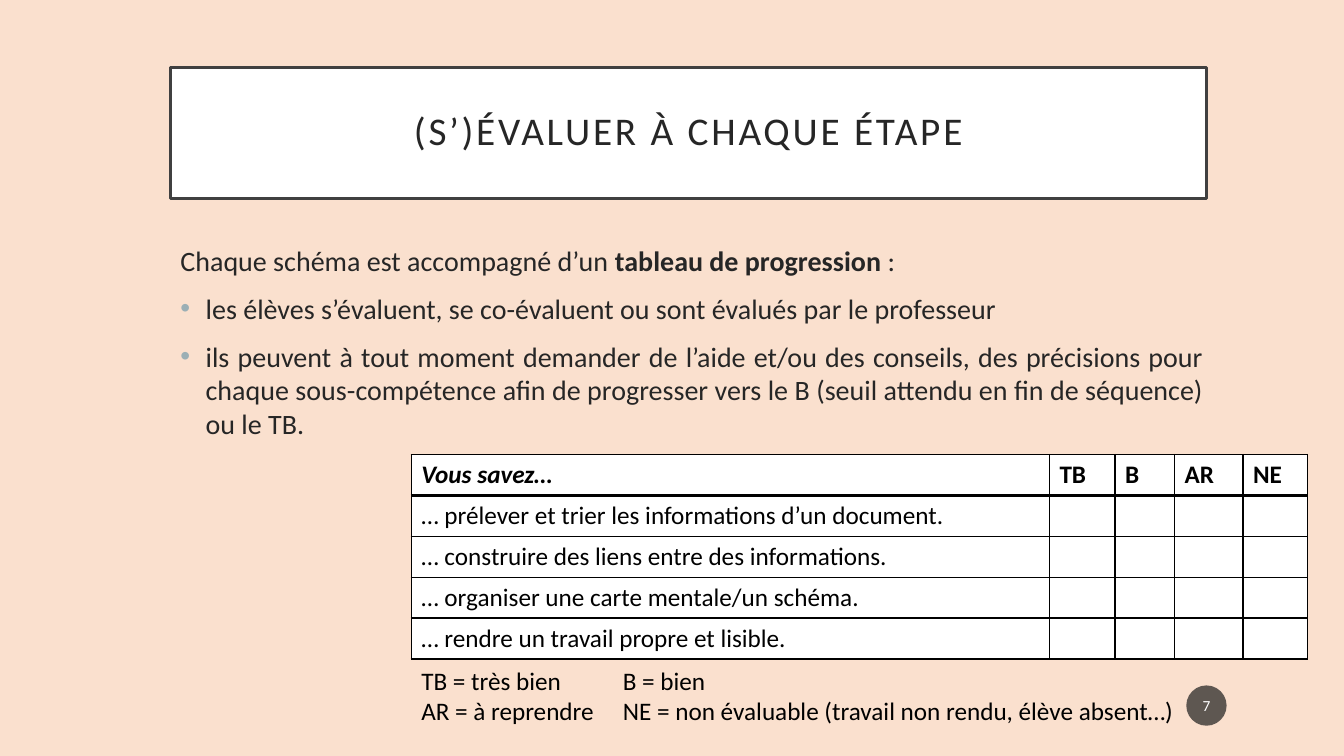
from dataclasses import dataclass

from lxml import etree
from pptx import Presentation
from pptx.dml.color import RGBColor
from pptx.enum.shapes import MSO_SHAPE
from pptx.enum.text import MSO_ANCHOR, MSO_AUTO_SIZE, PP_ALIGN
from pptx.oxml.ns import qn
from pptx.util import Pt

OVAL = MSO_SHAPE.OVAL
TOP, MIDDLE = MSO_ANCHOR.TOP, MSO_ANCHOR.MIDDLE
LEFT, CENTER, JUSTIFY = PP_ALIGN.LEFT, PP_ALIGN.CENTER, PP_ALIGN.JUSTIFY
NO_RESIZE = MSO_AUTO_SIZE.NONE

TITLE = "(S’)ÉVALUER À CHAQUE ÉTAPE"
INTRODUCTION = [("Chaque schéma est accompagné d’un ", False), ("tableau de progression", True), (" : ", False)]
BULLETS = [
    "les élèves s’évaluent, se co-évaluent ou sont évalués par le professeur",
    "ils peuvent à tout moment demander de l’aide et/ou des conseils, des précisions pour "
    "chaque sous-compétence afin de progresser vers le B (seuil attendu en fin de séquence) ou le TB.",
]
HEADERS = ["Vous savez…", "TB", "B", "AR", "NE"]
SKILLS = [
    "… prélever et trier les informations d’un document.",
    "… construire des liens entre des informations.",
    "… organiser une carte mentale/un schéma.",
    "… rendre un travail propre et lisible.",
]
LEGEND = [
    "TB = très bien\tB = bien",
    "AR = à reprendre\tNE = non évaluable (travail non rendu, élève absent…)",
]
PAGE_NUMBER = "7"


@dataclass(frozen=True)
class Theme:
    font: str = "Calibri"
    background: str = "FAE0CE"
    white: str = "FFFFFF"
    black: str = "000000"
    text: str = "262626"
    frame: str = "404040"
    bullet: str = "9BAFB5"
    badge: str = "1D1D1D"
    title_size: float = 28
    body_size: float = 20
    table_size: float = 18
    number_size: float = 11


THEME = Theme()
SLIDE_SIZE = (960, 540)
TITLE_BOX = (121.7, 48.2, 740.2, 93.6)
BODY_BOX = (121.7, 170.6, 745.2, 254.2)
BADGE_BOX = (847.4, 489.6, 28.8, 28.8)
TABLE_LEFT, TABLE_TOP = 293.8, 324.7
COLUMN_WIDTHS = [455.8, 46.8, 42.5, 49, 46]
ROW_HEIGHT = 29.2
LEGEND_BOX = (TABLE_LEFT, 471.6, 568.1, 51.1)
LEGEND_TAB = 144
INDENT = 18


def apply(target, values):
    for name, value in values.items():
        setattr(target, name, value)


def points(values):
    return [Pt(value) for value in values]


def place(shape, box):
    apply(shape, dict(zip(("left", "top", "width", "height"), points(box))))


def add_element(parent, tag, **attributes):
    return etree.SubElement(parent, qn(tag), {name: str(value) for name, value in attributes.items()})


def set_frame(frame, anchor=TOP, side=7.2, edge=3.6):
    apply(frame, {
        "word_wrap": True, "auto_size": NO_RESIZE, "vertical_anchor": anchor,
        "margin_left": Pt(side), "margin_right": Pt(side),
        "margin_top": Pt(edge), "margin_bottom": Pt(edge),
    })


def add_run(paragraph, text, size, color, bold=False, italic=False):
    run = paragraph.add_run()
    run.text = text
    apply(run.font, {"name": THEME.font, "size": Pt(size), "bold": bold, "italic": italic})
    run.font.color.rgb = RGBColor.from_string(color)
    return run


def format_paragraph(paragraph, alignment, before=0, spacing=1.0):
    apply(paragraph, {"alignment": alignment, "space_before": Pt(before),
                      "space_after": Pt(0), "line_spacing": spacing})


def paragraph_at(frame, index):
    return frame.paragraphs[0] if index == 0 else frame.add_paragraph()


def fill_solid(target, color):
    target.fill.solid()
    target.fill.fore_color.rgb = RGBColor.from_string(color)


def set_bullet(paragraph, bulleted):
    properties = paragraph._p.get_or_add_pPr()
    properties.set("marL", str(Pt(INDENT if bulleted else 0)))
    properties.set("indent", str(Pt(-INDENT if bulleted else 0)))
    if bulleted:
        add_element(add_element(properties, "a:buClr"), "a:srgbClr", val=THEME.bullet)
        add_element(properties, "a:buFont", typeface="Arial")
        add_element(properties, "a:buChar", char="•")
    else:
        add_element(properties, "a:buNone")


def set_borders(cell, bottom_width):
    properties = cell._tc.get_or_add_tcPr()
    for side, width in (("L", 1), ("R", 1), ("T", 1), ("B", bottom_width)):
        line = add_element(properties, f"a:ln{side}", w=Pt(width))
        add_element(add_element(line, "a:solidFill"), "a:srgbClr", val=THEME.black)


def build_title(slide):
    title = slide.shapes.title
    place(title, TITLE_BOX)
    fill_solid(title, THEME.white)
    title.line.color.rgb = RGBColor.from_string(THEME.frame)
    title.line.width = Pt(2.5)
    set_frame(title.text_frame, MIDDLE, 14.4, 14.4)
    paragraph = title.text_frame.paragraphs[0]
    format_paragraph(paragraph, CENTER, spacing=0.9)
    run = add_run(paragraph, TITLE, THEME.title_size, THEME.text)
    run.font._element.set("spc", "200")


def build_body(slide):
    body = slide.placeholders[1]
    place(body, BODY_BOX)
    set_frame(body.text_frame)
    for index, parts in enumerate([INTRODUCTION] + [[(text, False)] for text in BULLETS]):
        paragraph = paragraph_at(body.text_frame, index)
        format_paragraph(paragraph, JUSTIFY, before=10)
        set_bullet(paragraph, index > 0)
        for text, bold in parts:
            add_run(paragraph, text, THEME.body_size, THEME.text, bold)


def build_table(slide):
    rows = [HEADERS] + [[skill] + [""] * (len(HEADERS) - 1) for skill in SKILLS]
    box = (TABLE_LEFT, TABLE_TOP, sum(COLUMN_WIDTHS), ROW_HEIGHT * len(rows))
    table = slide.shapes.add_table(len(rows), len(HEADERS), *points(box)).table
    for column, width in zip(table.columns, COLUMN_WIDTHS):
        column.width = Pt(width)
    for row_index, texts in enumerate(rows):
        table.rows[row_index].height = Pt(ROW_HEIGHT)
        header = row_index == 0
        for column_index, text in enumerate(texts):
            cell = table.cell(row_index, column_index)
            set_borders(cell, 2 if header else 1)
            fill_solid(cell, THEME.white)
            if text:
                add_run(cell.text_frame.paragraphs[0], text, THEME.table_size, THEME.black,
                        header, header and column_index == 0)


def build_legend(slide):
    frame = slide.shapes.add_textbox(*points(LEGEND_BOX)).text_frame
    set_frame(frame)
    for index, text in enumerate(LEGEND):
        paragraph = paragraph_at(frame, index)
        format_paragraph(paragraph, LEFT)
        tabs = add_element(paragraph._p.get_or_add_pPr(), "a:tabLst")
        add_element(tabs, "a:tab", pos=Pt(LEGEND_TAB), algn="l")
        add_run(paragraph, text, THEME.table_size, THEME.black)


def build_badge(slide):
    badge = slide.shapes.add_shape(OVAL, *points(BADGE_BOX))
    badge.shadow.inherit = False
    fill_solid(badge, THEME.badge)
    add_element(badge._element.spPr.find(f".//{qn('a:srgbClr')}"), "a:alpha", val=70000)
    badge.line.fill.background()
    set_frame(badge.text_frame, MIDDLE, 1.4)
    paragraph = badge.text_frame.paragraphs[0]
    format_paragraph(paragraph, CENTER)
    add_run(paragraph, PAGE_NUMBER, THEME.number_size, THEME.white)


def main():
    presentation = Presentation()
    presentation.slide_width, presentation.slide_height = points(SLIDE_SIZE)
    slide = presentation.slides.add_slide(presentation.slide_layouts[1])
    fill_solid(slide.background, THEME.background)
    for build in (build_title, build_badge, build_body, build_table, build_legend):
        build(slide)
    presentation.save("out.pptx")


if __name__ == "__main__":
    main()
